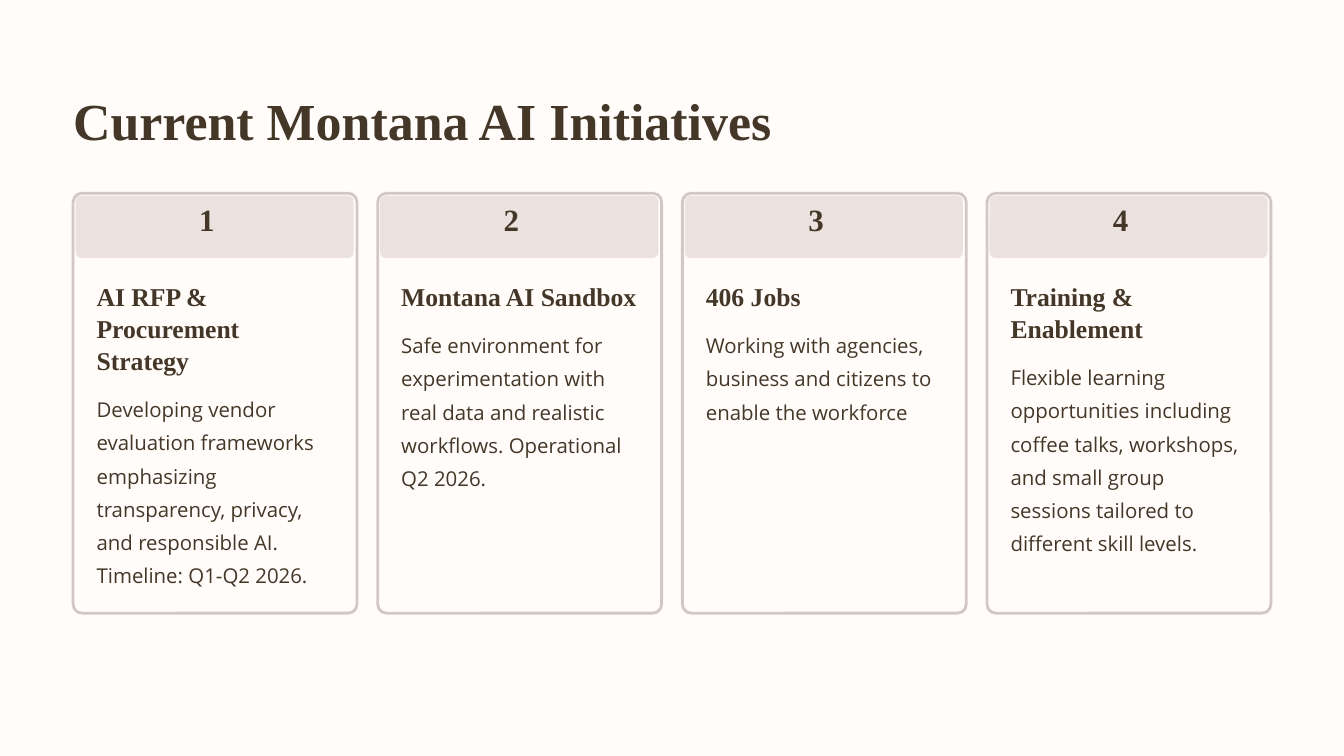
from pptx import Presentation
from pptx import util as u
from pptx.dml.color import RGBColor
from pptx.enum import shapes, text

TITLE = "Current Montana AI Initiatives"
# heading, heading lines, description, description lines
INITIATIVES = [
    ("AI RFP & Procurement Strategy", 3,
     "Developing vendor evaluation frameworks emphasizing transparency, "
     "privacy, and responsible AI. Timeline: Q1-Q2 2026.", 6),
    ("Montana AI Sandbox", 1,
     "Safe environment for experimentation with real data and realistic "
     "workflows. Operational Q2 2026.", 5),
    ("406 Jobs", 1,
     "Working with agencies, business and citizens to enable the workforce", 3),
    ("Training & Enablement", 2,
     "Flexible learning opportunities including coffee talks, workshops, and "
     "small group sessions tailored to different skill levels.", 6),
]

PAPER, BAND, BORDER, INK = "FFFCFA", "EBE2E0", "D1C8C6", "443728"
SERIF = {"name": "Times New Roman", "bold": True}
STYLES = {  # font values, line spacing in points
    "title": ({**SERIF, "size": u.Pt(44.5)}, 55.5),
    "number": ({**SERIF, "size": u.Pt(26.5)}, 26.5),
    "heading": ({**SERIF, "size": u.Pt(22)}, 27.5),
    "body": ({"name": "Open Sans", "bold": False, "size": u.Pt(17.5)}, 28.5),
}

LEFT, TOP = 0.87, 2.3
TITLE_WIDTH = 8.6
CARD_WIDTH, CARD_HEIGHT = 3.38, 5
PITCH = (11.75 - LEFT) / (len(INITIATIVES) - 1)
TEXT_INSET, TEXT_WIDTH = 0.28, 2.82
HEADING_TOP, HEADING_GAP = 3.33, 0.15


def color(value):
    return RGBColor.from_string(value)


def add_panel(page, area, radius, fill, border=None):
    """Add a rounded rectangle; radius is a share of its shorter side."""
    panel = page.shapes.add_shape(shapes.MSO_SHAPE.ROUNDED_RECTANGLE,
                                  *map(u.Inches, area))
    panel.shadow.inherit = False
    panel.adjustments[0] = radius
    panel.fill.solid()
    panel.fill.fore_color.rgb = color(fill)
    if border:
        panel.line.color.rgb = color(border)
        panel.line.width = u.Pt(2.4)
    else:
        panel.line.fill.background()


def add_text(page, area, words, style, wrap=False):
    font, spacing = STYLES[style]
    frame = page.shapes.add_textbox(*map(u.Inches, area)).text_frame
    frame_format = {"margin_left": 0, "margin_right": 0, "margin_top": 0,
                    "margin_bottom": 0, "word_wrap": wrap,
                    "vertical_anchor": text.MSO_ANCHOR.TOP}
    for name, value in frame_format.items():
        setattr(frame, name, value)
    para = frame.paragraphs[0]
    para.line_spacing = u.Pt(spacing)
    span = para.add_run()
    span.text = words
    for name, value in font.items():
        setattr(span.font, name, value)
    span.font.color.rgb = color(INK)


def block_height(style, lines):
    """Height in inches of a number of lines set in a style."""
    return lines * STYLES[style][1] / 72


def add_card(page, index, heading, heading_lines, body, body_lines):
    left = LEFT + index * PITCH
    text_left = left + TEXT_INSET
    heading_height = block_height("heading", heading_lines)
    body_top = HEADING_TOP + heading_height + HEADING_GAP
    body_height = block_height("body", body_lines)

    add_panel(page, (left, TOP, CARD_WIDTH, CARD_HEIGHT), 0.031, PAPER, BORDER)
    add_panel(page, (left + 0.03, TOP + 0.03, 3.31, 0.74), 0.086, BAND)
    add_text(page, (left + 1.5, 2.46, 0.37, 0.47), str(index + 1), "number")
    add_text(page, (text_left, HEADING_TOP, TEXT_WIDTH, heading_height),
             heading, "heading", wrap=heading_lines > 1)
    add_text(page, (text_left, body_top, TEXT_WIDTH, body_height),
             body, "body", wrap=True)


def main():
    deck = Presentation()
    deck.slide_width, deck.slide_height = u.Inches(16), u.Inches(9)
    page = deck.slides.add_slide(deck.slide_layouts[6])
    page.background.fill.solid()
    page.background.fill.fore_color.rgb = color(PAPER)

    add_text(page, (LEFT, 1.03, TITLE_WIDTH, 0.78), TITLE, "title")
    for index, initiative in enumerate(INITIATIVES):
        add_card(page, index, *initiative)
    deck.save("out.pptx")


if __name__ == "__main__":
    main()
